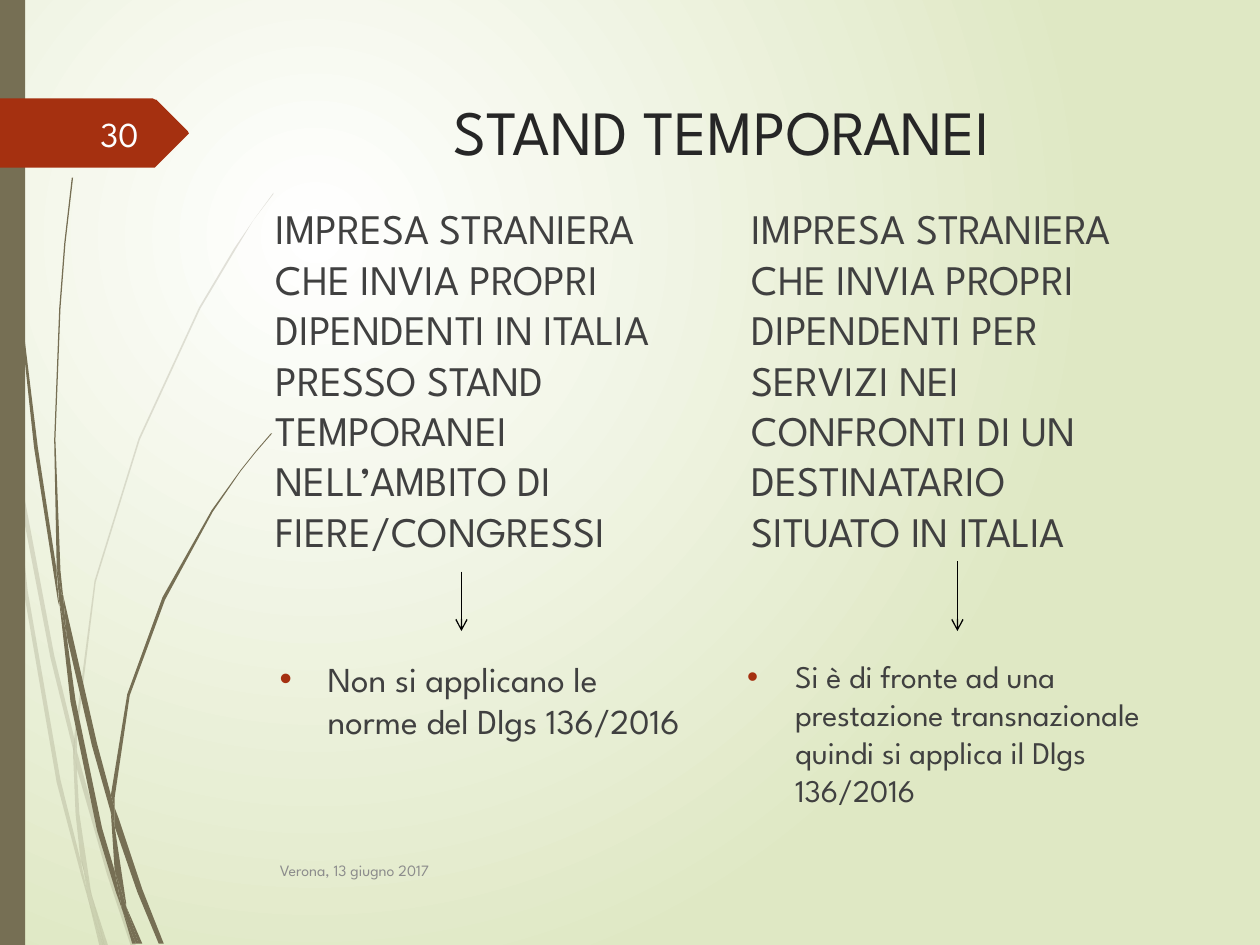
"""Build the slide on temporary stands, with two columns and a grass motif."""
from lxml.etree import SubElement
from pptx import Presentation
from pptx.dml.color import RGBColor
from pptx.enum.shapes import MSO_CONNECTOR, MSO_SHAPE
from pptx.enum.text import MSO_ANCHOR, MSO_AUTO_SIZE, PP_ALIGN
from pptx.oxml.ns import qn
from pptx.util import Pt

FONT = "League Spartan"
WHITE = RGBColor(0xFF, 0xFF, 0xFF)
PALE_GREEN = RGBColor(0xDF, 0xE8, 0xC4)
OLIVE = RGBColor(0x76, 0x6F, 0x54)
RED = RGBColor(0xA5, 0x30, 0x10)
BLACK = RGBColor(0, 0, 0)
TITLE_COLOR = RGBColor(0x26, 0x26, 0x26)
BODY_COLOR = RGBColor(0x40, 0x40, 0x40)
FOOTER_COLOR = RGBColor(0x8C, 0x8C, 0x8C)
NUMBER_COLOR = RGBColor(0xFE, 0xFF, 0xFF)

TITLE = "STAND TEMPORANEI"
FOOTER = "Verona, 13 giugno 2017"
NUMBER = "30"
COLUMNS = [
    {
        "case": "IMPRESA STRANIERA CHE INVIA PROPRI DIPENDENTI IN ITALIA "
                "PRESSO STAND TEMPORANEI NELL’AMBITO DI FIERE/CONGRESSI",
        "case_left": 150.5, "case_width": 254,
        "rule": "Non si applicano le norme del Dlgs 136/2016",
        "rule_left": 152.8, "rule_width": 252, "rule_size": 20,
        "arrow_x": 263.7, "arrow_top": 326.7,
    },
    {
        "case": "IMPRESA STRANIERA CHE INVIA PROPRI DIPENDENTI PER SERVIZI "
                "NEI CONFRONTI DI UN DESTINATARIO SITUATO IN ITALIA",
        "case_left": 422.6, "case_width": 249,
        "rule": "Si è di fronte ad una prestazione transnazionale "
                "quindi si applica il Dlgs 136/2016",
        "rule_left": 419.8, "rule_width": 251.3, "rule_size": 18,
        "arrow_x": 547.1, "arrow_top": 320.8,
    },
]
CASE_TOP, CASE_HEIGHT = 111.6, 209.5
RULE_TOP, RULE_HEIGHT = 372.1, 92.9
ARROW_BOTTOM = 360.6
BULLET_INDENT = 27.4

GRASS_GRID = Pt(0.72)
PALE_BLADES = [
    [(8, 350), (6, 322), (0, 282), (0, 299), (7, 344)],
    [(40, 522), (59, 599), (59, 586), (43, 520), (10, 345), (12, 376)],
    [(64, 607), (61, 596), (61, 610), (85, 694), (104, 751), (108, 751), (88, 692)],
    [(83, 751), (86, 751), (73, 711)],
    [(64, 683), (48, 619), (22, 469), (12, 376), (8, 350), (19, 470), (45, 621),
     (64, 693), (70, 714), (69, 707)],
    [(58, 599), (60, 646), (64, 683), (67, 692), (73, 711), (72, 706), (63, 646),
     (61, 610), (61, 608)],
    [(61, 584), (76, 462), (111, 349), (159, 245), (187, 198), (201, 175), (217, 154),
     (217, 153), (201, 175), (186, 197), (158, 244), (110, 348), (75, 461), (59, 584),
     (59, 586), (61, 596)],
    [(70, 714), (79, 751), (82, 751)],
    [(61, 608), (61, 610), (61, 596), (59, 586), (58, 599)],
    [(67, 692), (65, 683), (69, 707), (70, 714), (82, 751), (83, 751), (73, 711)],
]
DARK_BLADES = [
    [(5, 110), (14, 233), (27, 355), (46, 477), (47, 481), (45, 457), (45, 453),
     (30, 355), (15, 232), (6, 109), (4, 48), (3, 0), (2, 0), (3, 48)],
    [(73, 592), (88, 645), (88, 633), (88, 631), (77, 590), (50, 472), (53, 505)],
    [(94, 649), (91, 641), (91, 656), (109, 708), (126, 749), (130, 749), (113, 706)],
    [(91, 691), (81, 657), (60, 556), (53, 505), (47, 477), (56, 557), (77, 659),
     (92, 708), (97, 722), (96, 717)],
    [(50, 472), (48, 453), (44, 349), (48, 245), (52, 193), (58, 141), (57, 141),
     (51, 193), (47, 245), (43, 349), (45, 449), (49, 472)],
    [(110, 749), (113, 749), (100, 719)],
    [(47, 477), (53, 505), (50, 472), (49, 472), (45, 449), (45, 453)],
    [(91, 633), (103, 552), (131, 476), (169, 406), (191, 374), (203, 359), (216, 344),
     (215, 344), (203, 358), (191, 373), (168, 405), (129, 474), (101, 551), (88, 631),
     (91, 641)],
    [(97, 722), (105, 749), (108, 749)],
    [(88, 645), (91, 691), (96, 706), (100, 719), (100, 716), (91, 656), (90, 651)],
    [(88, 645), (90, 651), (91, 656), (91, 641), (88, 631), (88, 633)],
    [(96, 706), (91, 691), (96, 717), (97, 722), (108, 749), (110, 749), (100, 719)],
]
TAG_OUTLINE = [(149, 107), (124, 132), (123, 133), (121, 133), (0, 133), (0, 78),
               (121, 78), (123, 79), (124, 79), (149, 104), (149.6, 105.5)]


def paint(shape, color):
    shape.shadow.inherit = False
    shape.fill.solid()
    shape.fill.fore_color.rgb = color
    shape.line.fill.background()


def add_outline(slide, outline, color, opacity=100):
    builder = slide.shapes.build_freeform(*outline[0], scale=GRASS_GRID)
    builder.add_line_segments(outline[1:], close=True)
    shape = builder.convert_to_shape()
    paint(shape, color)
    if opacity < 100:
        fill_color = shape._element.spPr.find(qn("a:solidFill"))[0]
        SubElement(fill_color, qn("a:alpha"), val=str(opacity * 1000))


def write(shape, text, size, color, anchor=MSO_ANCHOR.TOP, align=PP_ALIGN.LEFT):
    frame = shape.text_frame
    frame.text = text
    frame.word_wrap = True
    frame.auto_size = MSO_AUTO_SIZE.NONE
    frame.vertical_anchor = anchor
    paragraph = frame.paragraphs[0]
    paragraph.alignment = align
    font = paragraph.runs[0].font
    font.name, font.size, font.color.rgb = FONT, Pt(size), color
    return paragraph


def add_text(slide, box, *style):
    return write(slide.shapes.add_textbox(*map(Pt, box)), *style)


def add_bullet(paragraph):
    properties = paragraph._p.get_or_add_pPr()
    properties.set("marL", str(Pt(BULLET_INDENT)))
    properties.set("indent", str(-Pt(BULLET_INDENT)))
    color = SubElement(properties, qn("a:buClr"))
    SubElement(color, qn("a:srgbClr"), val=str(RED))
    SubElement(properties, qn("a:buFont"), typeface="Arial")
    SubElement(properties, qn("a:buChar"), char="•")


def add_arrow(slide, x, top, bottom):
    arrow = slide.shapes.add_connector(
        MSO_CONNECTOR.STRAIGHT, Pt(x), Pt(top), Pt(x), Pt(bottom))
    arrow.line.color.rgb = BLACK
    arrow.line.width = Pt(0.75)
    SubElement(arrow.line._get_or_add_ln(), qn("a:tailEnd"), type="arrow")
    SubElement(arrow._element.spPr, qn("a:effectLst"))


def set_background(slide):
    fill = slide.background.fill
    fill.gradient()
    for stop, color in zip(fill.gradient_stops, (WHITE, PALE_GREEN)):
        stop.color.rgb = color
    gradient = slide._element.find(".//" + qn("a:gradFill"))
    gradient.remove(gradient.find(qn("a:lin")))
    circle = SubElement(gradient, qn("a:path"), path="circle")
    SubElement(circle, qn("a:fillToRect"), l="50000", t="50000", r="100000", b="100000")


def main():
    presentation = Presentation()
    presentation.slide_width, presentation.slide_height = Pt(720), Pt(540)
    slide = presentation.slides.add_slide(presentation.slide_layouts[5])
    set_background(slide)
    for blade in PALE_BLADES:
        add_outline(slide, blade, OLIVE, opacity=20)
    for blade in DARK_BLADES:
        add_outline(slide, blade, OLIVE)
    edge = slide.shapes.add_shape(MSO_SHAPE.RECTANGLE, 0, 0, Pt(14.4), Pt(540))
    paint(edge, OLIVE)
    add_outline(slide, TAG_OUTLINE, RED)

    title = slide.shapes.title
    title.left, title.top, title.width, title.height = map(Pt, (153.2, 49, 519, 50.4))
    write(title, TITLE, 36, TITLE_COLOR, MSO_ANCHOR.TOP, PP_ALIGN.CENTER)

    for column in COLUMNS:
        case = add_text(
            slide, (column["case_left"], CASE_TOP, column["case_width"], CASE_HEIGHT),
            column["case"], 24, BODY_COLOR, MSO_ANCHOR.BOTTOM)
        rule = add_text(
            slide, (column["rule_left"], RULE_TOP, column["rule_width"], RULE_HEIGHT),
            column["rule"], column["rule_size"], BODY_COLOR)
        case.space_before = rule.space_before = Pt(10)
        add_bullet(rule)
        add_arrow(slide, column["arrow_x"], column["arrow_top"], ARROW_BOTTOM)

    add_text(slide, (152.8, 483.1, 450, 28.8), FOOTER, 9, FOOTER_COLOR, MSO_ANCHOR.MIDDLE)
    add_text(slide, (40.3, 61.9, 46.1, 28.8), NUMBER, 20, NUMBER_COLOR,
             MSO_ANCHOR.MIDDLE, PP_ALIGN.RIGHT)
    presentation.save("out.pptx")


if __name__ == "__main__":
    main()
